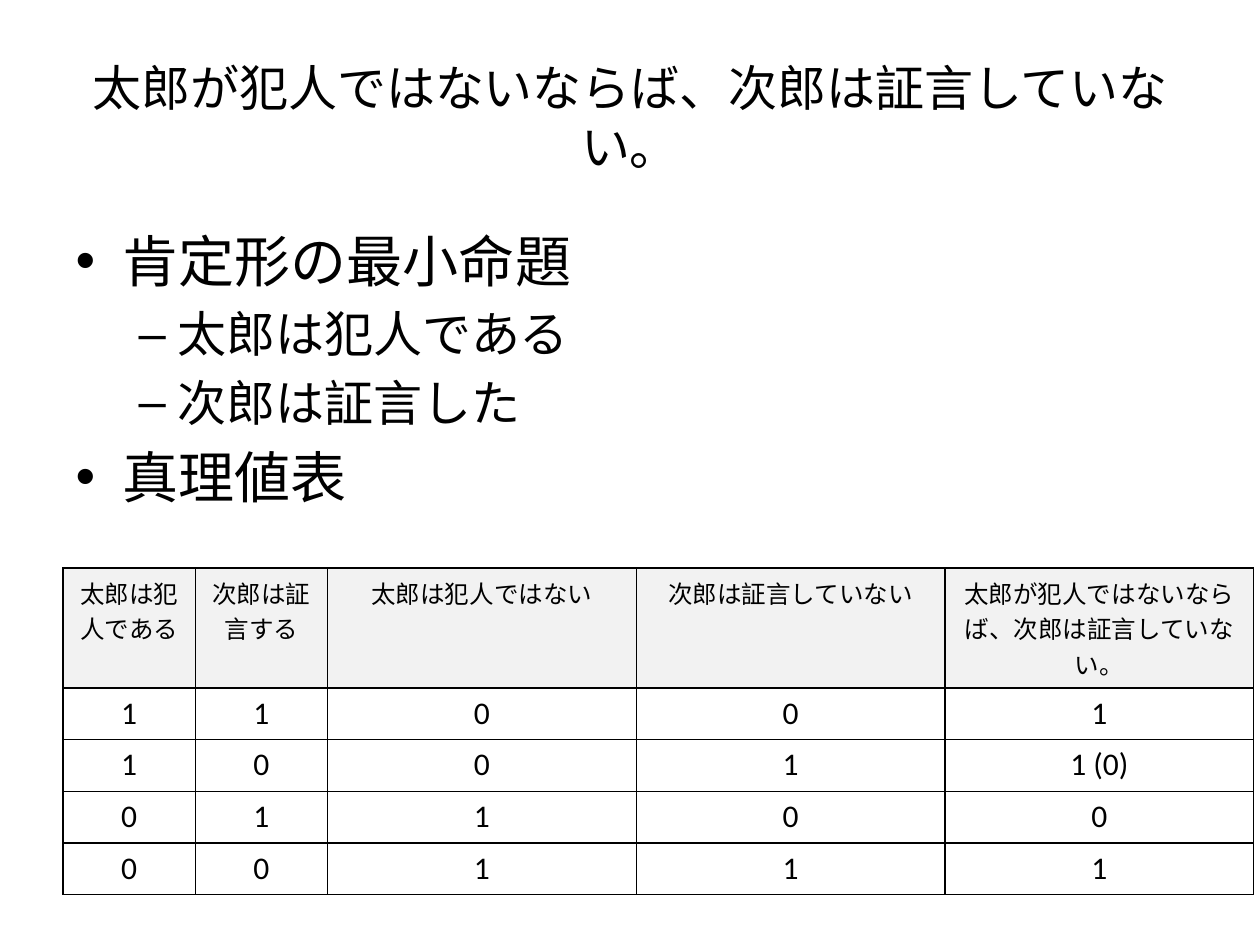
import dataclasses

import pptx
import pptx.dml.color
import pptx.enum.text
import pptx.oxml
import pptx.oxml.ns
import pptx.util

Inches = pptx.util.Inches
Pt = pptx.util.Pt
CENTER = pptx.enum.text.PP_ALIGN.CENTER


@dataclasses.dataclass(frozen=True)
class Theme:
    font: str = "Calibri"
    ink: str = "000000"
    header_fill: str = "F2F2F2"
    border_points: float = 1
    title_size: int = 28
    list_sizes: tuple = (32, 28)
    header_size: int = 14
    value_size: int = 18


THEME = Theme()
WIDTH, HEIGHT = 10, 7.5
MARGIN = WIDTH / 20

TITLE = "太郎が犯人ではないならば、次郎は証言していない。"
OUTLINE = [
    (0, "肯定形の最小命題"),
    (1, "太郎は犯人である"),
    (1, "次郎は証言した"),
    (0, "真理値表"),
]
TRUTH_TABLE = [
    ["太郎は犯人である", "次郎は証言する", "太郎は犯人ではない", "次郎は証言していない", TITLE],
    ["1", "1", "0", "0", "1"],
    ["1", "0", "0", "1", "1 (0)"],
    ["0", "1", "1", "0", "0"],
    ["0", "0", "1", "1", "1"],
]
COLUMN_WIDTHS = [1.05] * 2 + [2.45] * 3
ROW_HEIGHT = 0.41


def write(para, text, *, size, align=None, level=0):
    para.level = level
    para.alignment = align
    span = para.add_run()
    span.text = text
    span.font.name = THEME.font
    span.font.size = Pt(size)
    span.font.color.rgb = pptx.dml.color.RGBColor.from_string(THEME.ink)


def place(box, left, top, width, height):
    box.left, box.top = Inches(left), Inches(top)
    box.width, box.height = Inches(width), Inches(height)
    box.text_frame.auto_size = pptx.enum.text.MSO_AUTO_SIZE.NONE


def fill_title(box):
    place(box, MARGIN, 0.04 * HEIGHT, WIDTH - 2 * MARGIN, HEIGHT / 6)
    write(box.text_frame.paragraphs[0], TITLE, size=THEME.title_size, align=CENTER)


def fill_outline(box):
    place(box, MARGIN, 1.75, WIDTH - 2 * MARGIN, 0.66 * HEIGHT)
    frame = box.text_frame
    for index, (level, text) in enumerate(OUTLINE):
        para = frame.add_paragraph() if index else frame.paragraphs[0]
        write(para, text, size=THEME.list_sizes[level], level=level)


def draw_borders(cell):
    properties = cell._tc.get_or_add_tcPr()
    for side in ("lnL", "lnR", "lnT", "lnB"):
        properties.append(pptx.oxml.parse_xml(
            f'<a:{side} {pptx.oxml.ns.nsdecls("a")} w="{Pt(THEME.border_points)}">'
            f'<a:solidFill><a:srgbClr val="{THEME.ink}"/></a:solidFill></a:{side}>'
        ))


def fill_cell(cell, text, *, header):
    draw_borders(cell)
    if header:
        cell.fill.solid()
        cell.fill.fore_color.rgb = pptx.dml.color.RGBColor.from_string(THEME.header_fill)
    else:
        cell.fill.background()
    size = THEME.header_size if header else THEME.value_size
    write(cell.text_frame.paragraphs[0], text, size=size, align=CENTER)


def add_truth_table(page):
    rows, columns = len(TRUTH_TABLE), len(COLUMN_WIDTHS)
    table = page.shapes.add_table(
        rows, columns, Inches(MARGIN), Inches(4.51),
        Inches(sum(COLUMN_WIDTHS)), Inches(rows * ROW_HEIGHT),
    ).table
    table.first_row = table.horz_banding = False
    for column, width in zip(table.columns, COLUMN_WIDTHS):
        column.width = Inches(width)
    for index, (row, texts) in enumerate(zip(table.rows, TRUTH_TABLE)):
        row.height = Inches(ROW_HEIGHT)
        for cell, text in zip(row.cells, texts):
            fill_cell(cell, text, header=index == 0)


def main():
    deck = pptx.Presentation()
    deck.slide_width, deck.slide_height = Inches(WIDTH), Inches(HEIGHT)
    page = deck.slides.add_slide(deck.slide_layouts[1])
    fill_title(page.shapes.title)
    fill_outline(page.placeholders[1])
    add_truth_table(page)
    deck.save("out.pptx")


if __name__ == "__main__":
    main()
